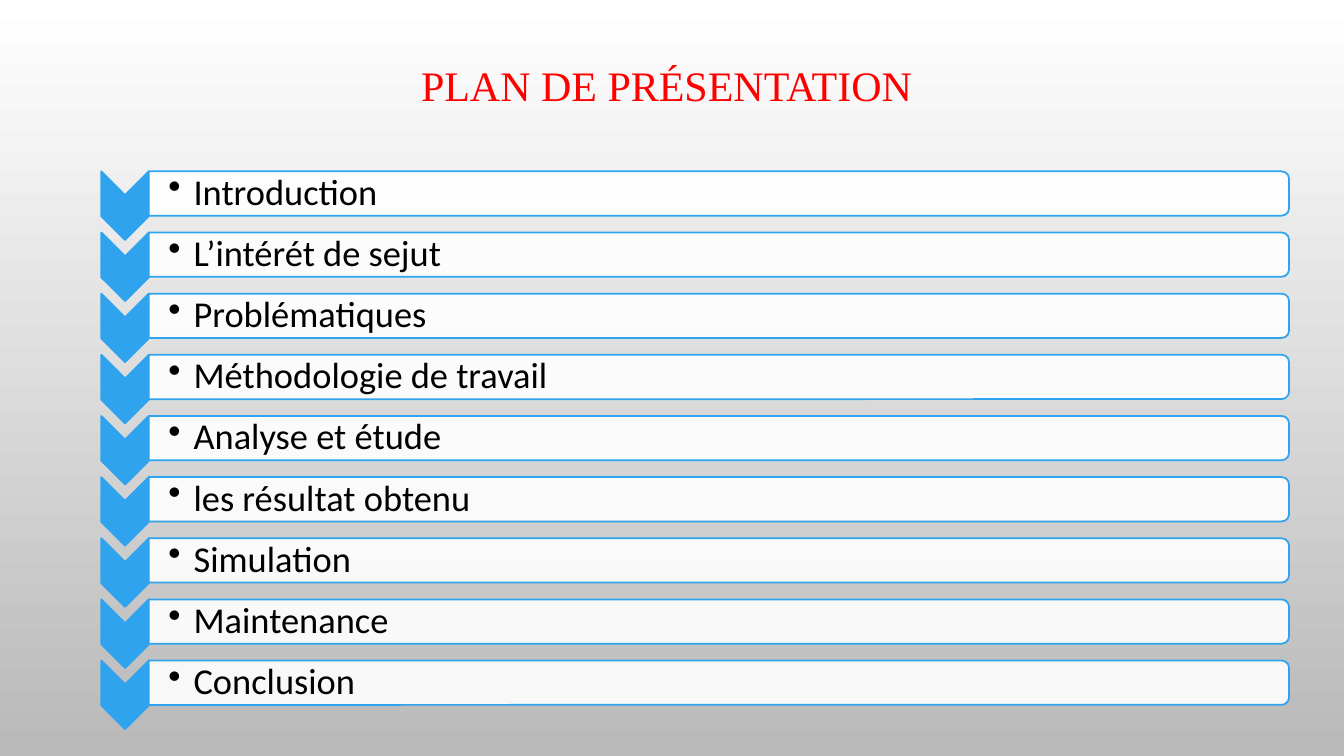
from lxml import etree
from pptx import Presentation
from pptx.dml.color import RGBColor
from pptx.enum.shapes import MSO_SHAPE as Preset
from pptx.enum.text import MSO_ANCHOR as Anchor, PP_ALIGN as Align
from pptx.oxml.ns import qn
from pptx.util import Inches, Pt

WHITE = RGBColor(0xFF, 0xFF, 0xFF)
GREY = RGBColor(0xB9, 0xB9, 0xB9)
BLUE = RGBColor(0x2F, 0xA3, 0xEE)
RED = RGBColor(0xFF, 0x00, 0x00)
BLACK = RGBColor(0x00, 0x00, 0x00)

TOPICS = [
    "Introduction",
    "L’intérét de sejut",
    "Problématiques",
    "Méthodologie de travail",
    "Analyse et étude",
    "les résultat obtenu",
    "Simulation",
    "Maintenance",
    "Conclusion",
]
FIRST_ROW = Inches(1.92)
ROW_PITCH = Inches(5.46) / 9
CHEVRON_X, CHEVRON_DROP = Inches(1.24), Inches(0.12)
BAR_X = Inches(7.13)


def add_turned_shape(shapes, preset, center_x, center_y, width, height, fill):
    """Add a blue-edged preset turned a quarter clockwise about its centre."""
    left, top = round(center_x - width / 2), round(center_y - height / 2)
    shape = shapes.add_shape(preset, left, top, width, height)
    shape.rotation = 90
    shape.shadow.inherit = False
    shape.fill.solid()
    shape.fill.fore_color.rgb = fill
    shape.line.color.rgb = BLUE
    shape.line.width = Pt(1.25)
    return shape


def format_font(font, **values):
    font.color.rgb = values.pop("color")
    for name, value in values.items():
        setattr(font, name, value)


presentation = Presentation()
presentation.slide_width, presentation.slide_height = Inches(13.33), Inches(7.5)
slide = presentation.slides.add_slide(presentation.slide_layouts[5])

background = slide.background.fill
background.gradient()
background.gradient_angle = 270
for stop, color, position in zip(background.gradient_stops, (WHITE, GREY), (0, 1)):
    stop.color.rgb = color
    stop.position = position

title = slide.shapes.title
title.left, title.top = Inches(1), 0
title.width, title.height = Inches(11.33), Inches(1.75)
title.text_frame.text = "PLAN DE PRÉSENTATION "
title.text_frame.vertical_anchor = Anchor.MIDDLE
heading = title.text_frame.paragraphs[0]
heading.alignment = Align.CENTER
heading.line_spacing = 0.9
format_font(heading.runs[0].font, name="Times New Roman", size=Pt(30), color=RED)

plan = slide.shapes.add_group_shape().shapes
for row, topic in enumerate(TOPICS):
    center_y = FIRST_ROW + row * ROW_PITCH
    add_turned_shape(plan, Preset.CHEVRON, CHEVRON_X, center_y + CHEVRON_DROP,
                     Inches(0.68), Inches(0.47), BLUE)
    bar = add_turned_shape(plan, Preset.ROUND_2_SAME_RECTANGLE, BAR_X, center_y,
                           Inches(0.44), Inches(11.31), WHITE)
    bar_color = bar.fill._xPr.find(qn("a:solidFill"))[0]
    etree.SubElement(bar_color, qn("a:alpha"), val="90000")

    label = plan.add_textbox(Inches(1.47), round(center_y - Inches(0.2)),
                             Inches(11.29), Inches(0.4))
    frame = label.text_frame
    frame_format = {
        "word_wrap": True,
        "vertical_anchor": Anchor.MIDDLE,
        "margin_left": Inches(0.2),
        "margin_top": Inches(0.02),
        "margin_right": Inches(0.02),
        "margin_bottom": Inches(0.02),
    }
    for name, value in frame_format.items():
        setattr(frame, name, value)
    frame.text = topic
    paragraph = frame.paragraphs[0]
    properties = paragraph._p.get_or_add_pPr()
    properties.set("marL", str(Inches(0.25)))
    properties.set("indent", str(-Inches(0.25)))
    etree.SubElement(properties, qn("a:buChar"), char="•")
    paragraph.level = 1
    paragraph.alignment = Align.LEFT
    paragraph.line_spacing = 0.9
    paragraph.space_after = Pt(3.9)
    format_font(paragraph.runs[0].font, name="Calibri", size=Pt(26), color=BLACK)

presentation.save("out.pptx")
